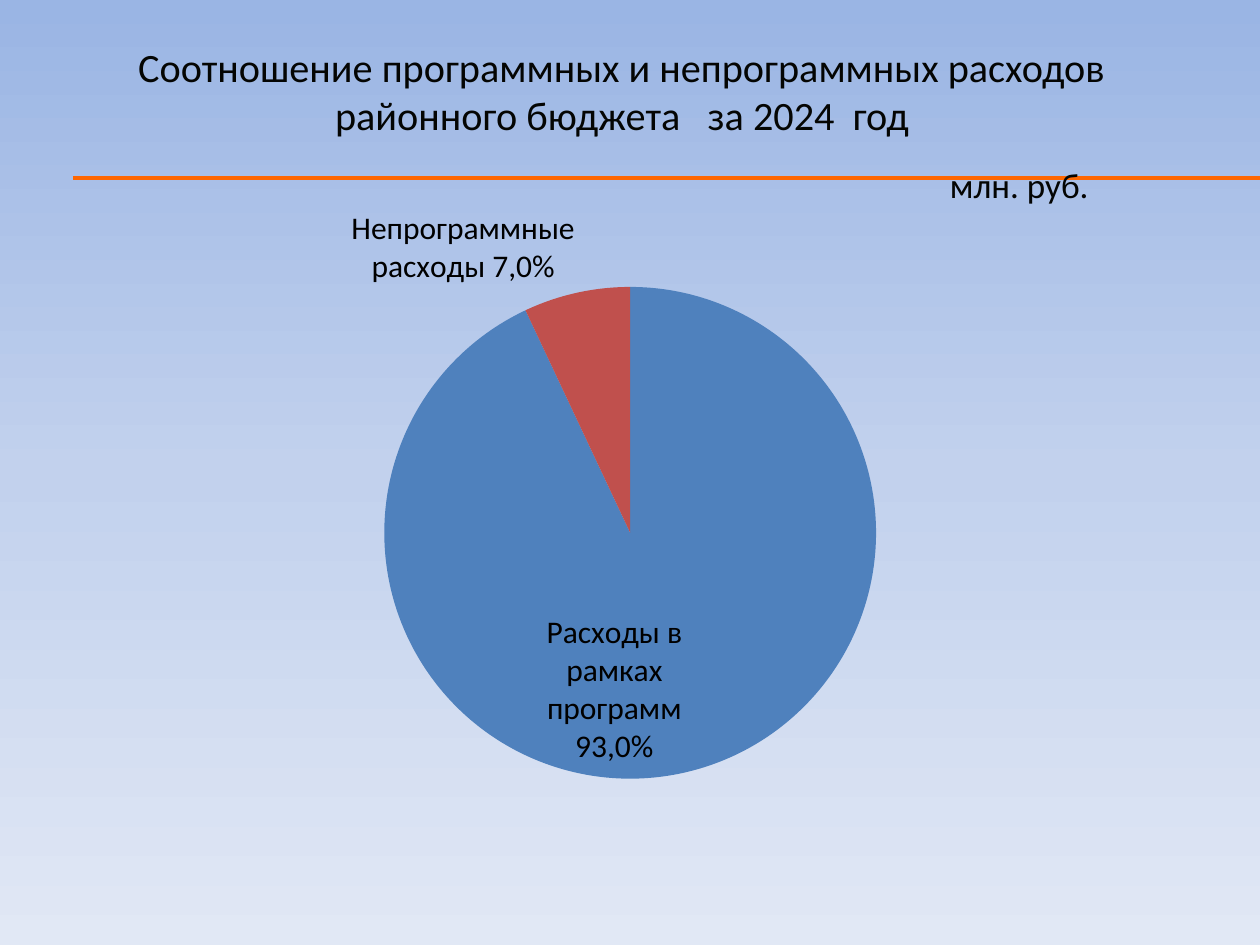
from copy import deepcopy
from dataclasses import dataclass

from lxml.etree import SubElement
from pptx import Presentation
from pptx.chart.data import CategoryChartData
from pptx.dml.color import RGBColor as Rgb
from pptx.enum.chart import XL_CHART_TYPE as ChartType, XL_LABEL_POSITION as LabelPos
from pptx.enum.shapes import MSO_CONNECTOR as Connector
from pptx.enum.text import MSO_ANCHOR as Anchor, PP_ALIGN as Align
from pptx.oxml import parse_xml
from pptx.oxml.ns import nsdecls, qn
from pptx.util import Cm, Pt


@dataclass(frozen=True)
class Theme:
    """Colours, font and type sizes of the slide."""
    font: str = "Calibri"
    ink: str = "040503"
    label_ink: str = "000000"
    rule: str = "FF6600"
    sky: tuple = ((0, "9AB5E4"), (0.5, "C2D1ED"), (1, "E1E8F5"))
    title_size: int = 23
    unit_size: int = 20
    label_size: int = 18


@dataclass(frozen=True)
class Box:
    """A region in centimetres."""
    left: float
    top: float
    width: float
    height: float

    def emu(self):
        """Return the region as slide lengths."""
        return Cm(self.left), Cm(self.top), Cm(self.width), Cm(self.height)


THEME = Theme()

EXPENSES = (
    ("Расходы в рамках программ 93%", "Расходы в рамках программ 93,0%",
     93, "4F81BD", LabelPos.INSIDE_END),
    ("Непрограммные расходы 7%", "Непрограммные расходы 7,0%",
     7, "C0504D", LabelPos.OUTSIDE_END),
)


def style_font(font, size, colour):
    """Apply the theme font with a size and colour."""
    font.name = THEME.font
    font.size = Pt(size)
    font.color.rgb = Rgb.from_string(colour)


def paint_background(slide):
    """Fill the slide with the vertical sky gradient."""
    fill = slide.background.fill
    fill.gradient()
    fill.gradient_angle = 270
    stop_list = next(slide.element.iter(qn("a:gsLst")))
    stop_list.append(deepcopy(stop_list[-1]))
    for stop, (position, colour) in zip(fill.gradient_stops, THEME.sky):
        stop.position = position
        stop.color.rgb = Rgb.from_string(colour)


def add_caption(slide, box, text, size, align):
    """Place one vertically centred paragraph in the box."""
    frame = slide.shapes.add_textbox(*box.emu()).text_frame
    frame.word_wrap = True
    frame.vertical_anchor = Anchor.MIDDLE
    caption = frame.paragraphs[0]
    caption.text = text
    caption.alignment = align
    style_font(caption.font, size, THEME.ink)


def add_header(slide, box):
    """Place the title, the rule under it and the unit of measure."""
    title_box = Box(box.left + 0.89, box.top + 0.5, 23.32, 2.64)
    add_caption(slide, title_box,
                "Соотношение программных и непрограммных расходов "
                "районного бюджета   за 2024  год",
                THEME.title_size, Align.CENTER)
    rule_y = Cm(box.top + box.height)
    rule = slide.shapes.add_connector(
        Connector.STRAIGHT, Cm(box.left + 1.47), rule_y,
        Cm(box.left + box.width), rule_y)
    rule.line.color.rgb = Rgb.from_string(THEME.rule)
    rule.line.width = Pt(2.25)
    SubElement(rule.element.spPr, qn("a:effectLst"))
    unit_box = Box(box.left + 18.9, box.top + box.height - 0.46, 5.59, 1.19)
    add_caption(slide, unit_box, "млн. руб.", THEME.unit_size, Align.LEFT)


def set_plot_area(chart, x, y, w, h):
    """Fix the inner plot area as fractions of the chart."""
    plot_area = next(chart.element.iter(qn("c:plotArea")))
    for layout in plot_area.findall(qn("c:layout")):
        plot_area.remove(layout)
    plot_area.insert(0, parse_xml(
        f'<c:layout {nsdecls("c")}><c:manualLayout>'
        '<c:layoutTarget val="inner"/>'
        '<c:xMode val="edge"/><c:yMode val="edge"/>'
        f'<c:x val="{x}"/><c:y val="{y}"/><c:w val="{w}"/><c:h val="{h}"/>'
        '</c:manualLayout></c:layout>'))


def add_expense_pie(slide, box):
    """Place the pie of programme and other expenses."""
    names, _, shares, _, _ = zip(*EXPENSES)
    data = CategoryChartData()
    data.categories = names
    data.add_series("Series 1", shares)
    chart = slide.shapes.add_chart(ChartType.PIE, *box.emu(), data).chart
    chart.has_legend = False
    chart.has_title = False
    style_font(chart.font, THEME.label_size, THEME.label_ink)
    diameter = 9.9
    set_plot_area(chart, 0.29, 0.13,
                  round(diameter / box.width, 2), round(diameter / box.height, 2))
    pie = chart.plots[0]
    pie.vary_by_categories = True
    pie.has_data_labels = True
    pie.data_labels.show_category_name = True
    pie.data_labels.show_value = False
    for index, (_, label_text, _, colour, position) in enumerate(EXPENSES):
        expense = pie.series[0].points[index]
        expense.format.fill.solid()
        expense.format.fill.fore_color.rgb = Rgb.from_string(colour)
        label = expense.data_label
        label.text_frame.text = label_text
        style_font(label.text_frame.paragraphs[0].font,
                   THEME.label_size, THEME.label_ink)
        label.position = position


def main():
    """Build and save the slide."""
    deck = Presentation()
    deck.slide_width, deck.slide_height = Cm(25.4), Cm(19.05)
    slide = deck.slides.add_slide(deck.slide_layouts[6])
    paint_background(slide)
    add_header(slide, Box(0, 0, 25.4, 3.58))
    add_expense_pie(slide, Box(0.79, 3.89, 23.83, 14.58))
    deck.save("out.pptx")


if __name__ == "__main__":
    main()
